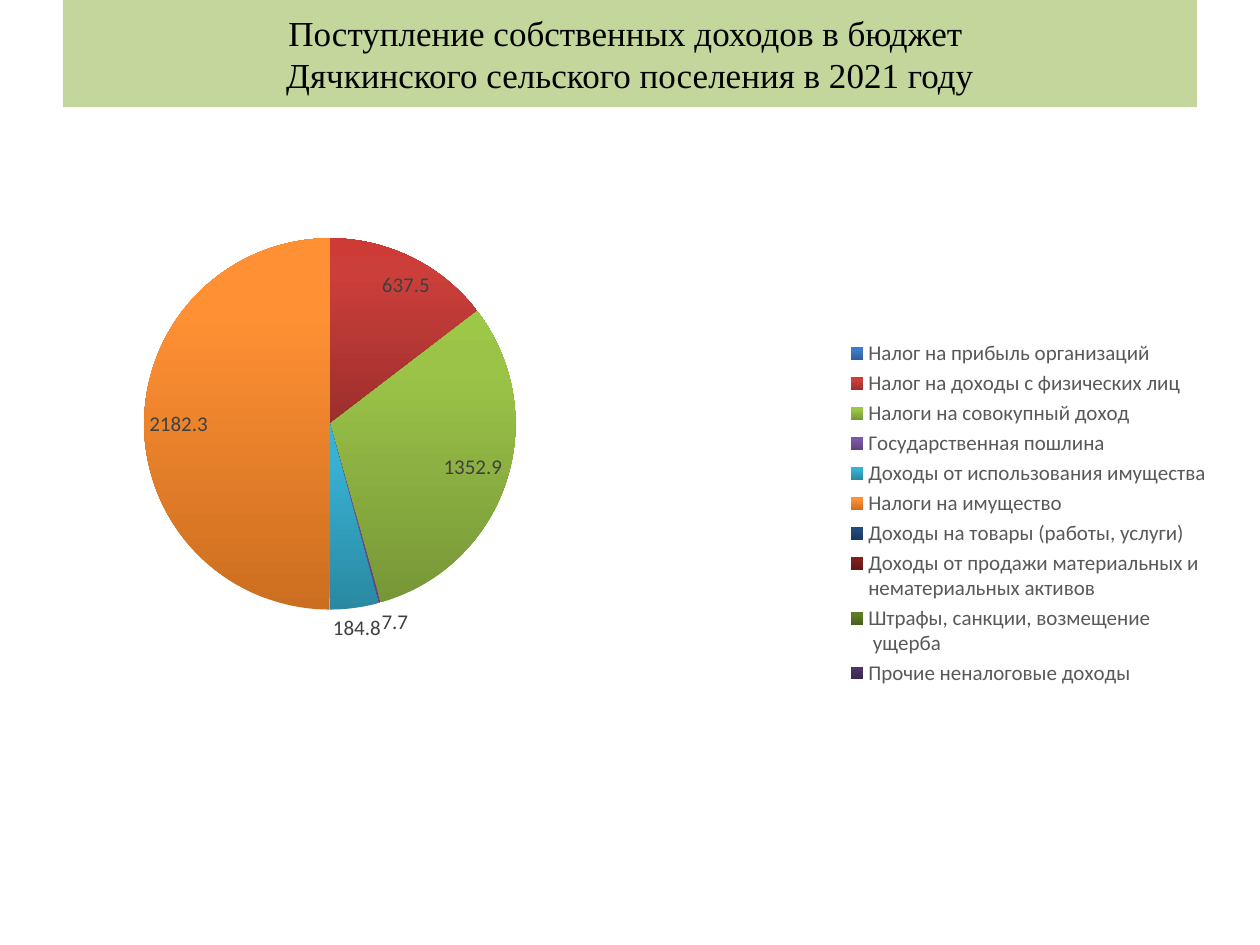
from copy import deepcopy

from lxml.etree import SubElement
from pptx import Presentation
from pptx.chart.data import CategoryChartData
from pptx.dml.color import RGBColor
from pptx.enum.chart import XL_CHART_TYPE, XL_LABEL_POSITION, XL_LEGEND_POSITION
from pptx.enum.shapes import MSO_SHAPE
from pptx.enum.text import MSO_ANCHOR, PP_ALIGN
from pptx.oxml.ns import qn
from pptx.util import Inches, Pt


def color(hex_text):
    return RGBColor.from_string(hex_text)


def style_font(font, size, hex_text, name="Calibri"):
    font.size = Pt(size)
    font.name = name
    font.color.rgb = color(hex_text)


deck = Presentation()
deck.slide_width, deck.slide_height = Inches(10), Inches(7.5)
slide = deck.slides.add_slide(deck.slide_layouts[6])
margin = Inches(0.5)
heading_height = Inches(0.85)

# Heading band
heading = slide.shapes.add_shape(
    MSO_SHAPE.RECTANGLE, margin, 0, deck.slide_width - 2 * margin, heading_height)
heading.shadow.inherit = False
heading.fill.solid()
heading.fill.fore_color.rgb = color("C3D69B")
heading.line.fill.background()
heading.text_frame.word_wrap = True
heading.text_frame.vertical_anchor = MSO_ANCHOR.MIDDLE
heading.text_frame.text = (
    "Поступление собственных доходов в бюджет \v"
    "Дячкинского сельского поселения в 2021 году")
heading_line = heading.text_frame.paragraphs[0]
heading_line.alignment = PP_ALIGN.CENTER
for run in heading_line.runs:
    style_font(run.font, 20, "000000", "Times New Roman")

# Income sources: name, amount, gradient colours from bottom to top
incomes = [
    ("Налог на прибыль организаций", None, ("2F5F99", "3D7CC7", "3A7CCB")),
    ("Налог на доходы с физических лиц", 637.5, ("9C2F2D", "CB3E3A", "CE3B37")),
    ("Налоги на совокупный доход", 1352.9, ("779737", "9BC348", "9DC746")),
    ("Государственная пошлина ", 7.7, ("5F4480", "7B58A6", "7C57A8")),
    ("Доходы от использования имущества", 184.8, ("2A88A2", "37B1D2", "34B4D6")),
    ("Налоги на имущество", 2182.3, ("CC6E20", "FF9034", "FF9136")),
    ("Доходы на товары (работы, услуги)", None, ("19395F", "204A7C", "1E4A7E")),
    ("Доходы от продажи материальных и \nнематериальных активов", None,
     ("621917", "7F201E", "811F1C")),
    ("Штрафы, санкции, возмещение\n ущерба", None, ("495F1C", "5F7C25", "607E23")),
    ("Прочие неналоговые доходы", None, ("39284E", "4A3365", "4A3366")),
]
income_data = CategoryChartData()
income_data.categories = [name for name, _, _ in incomes]
income_data.add_series("Series 1", [amount for _, amount, _ in incomes])

# Pie chart
income_pie = slide.shapes.add_chart(
    XL_CHART_TYPE.PIE, margin, heading_height, Inches(9.21), Inches(6.45),
    income_data).chart
income_pie.has_title = False
style_font(income_pie.font, 10, "000000")
pie_plot = income_pie.plots[0]
pie_plot.vary_by_categories = True

# Slice gradients
for index, (_, _, shades) in enumerate(incomes):
    slice_fill = pie_plot.series[0].points[index].format.fill
    slice_fill.gradient()
    slice_fill.gradient_angle = 90
    last_stop = slice_fill.gradient_stops[1]._gs
    last_stop.addnext(deepcopy(last_stop))
    for stop, share, shade in zip(slice_fill.gradient_stops, (0, 0.8, 1), shades):
        stop.position = share
        stop.color.rgb = color(shade)

# Amounts on the slices
pie_plot.has_data_labels = True
amounts = pie_plot.data_labels
amounts.show_value = True
amounts.show_percentage = False
amounts.position = XL_LABEL_POSITION.BEST_FIT
style_font(amounts.font, 12, "404040")

# Legend
income_pie.has_legend = True
income_pie.legend.position = XL_LEGEND_POSITION.RIGHT
income_pie.legend.include_in_layout = False
style_font(income_pie.legend.font, 12, "595959")

# Place of the pie, as shares of the chart
plot_area = income_pie.element.find(".//" + qn("c:plotArea"))
for old_layout in plot_area.findall(qn("c:layout")):
    plot_area.remove(old_layout)
layout = SubElement(plot_area, qn("c:layout"))
plot_area.insert(0, layout)
manual = SubElement(layout, qn("c:manualLayout"))
for tag, value in (("layoutTarget", "inner"), ("xMode", "edge"), ("yMode", "edge"),
                   ("x", "0.07"), ("y", "0.12"), ("w", "0.32"), ("h", "0.54")):
    SubElement(manual, qn("c:" + tag)).set("val", value)

deck.save("out.pptx")
